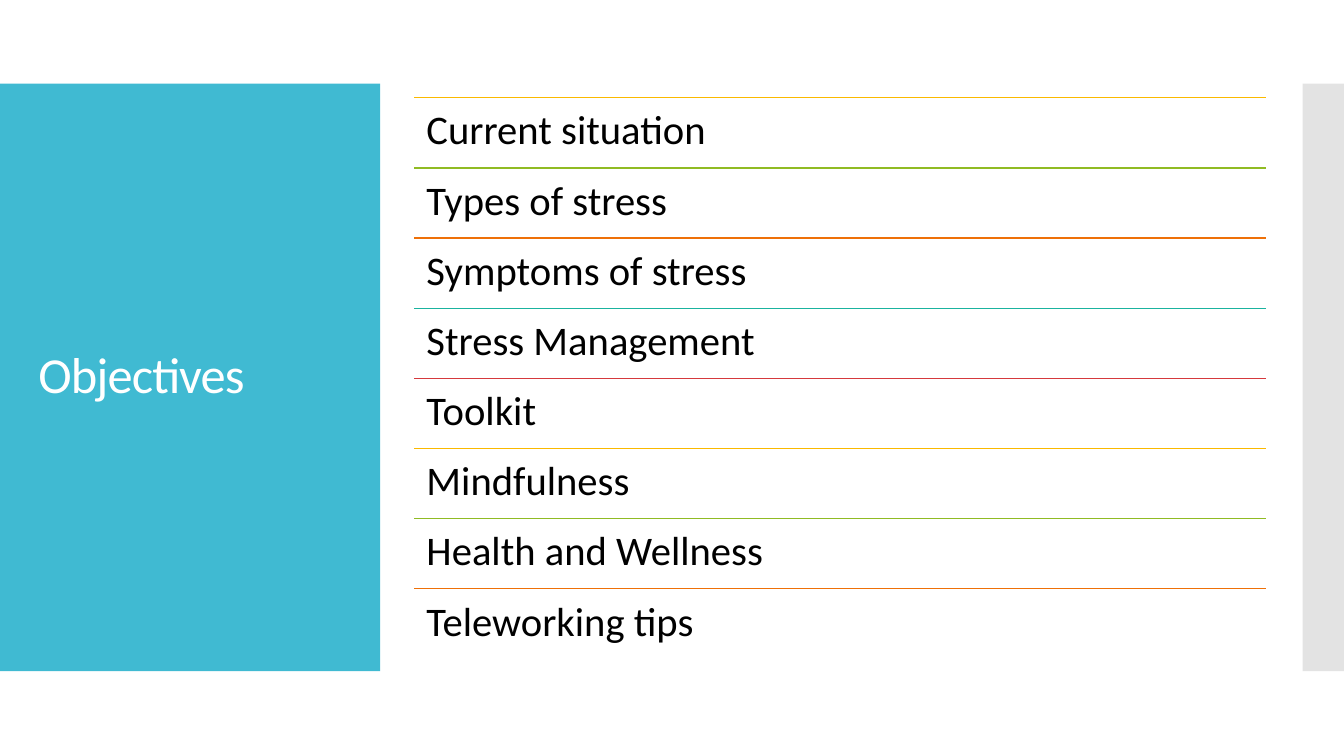
from itertools import cycle

from lxml.etree import SubElement
from pptx import Presentation
from pptx.dml.color import RGBColor
from pptx.enum.shapes import MSO_CONNECTOR, MSO_SHAPE
from pptx.enum.text import MSO_ANCHOR, MSO_AUTO_SIZE, PP_ALIGN
from pptx.oxml.ns import qn
from pptx.util import Inches, Pt

TOPICS = [
    "Current situation",
    "Types of stress",
    "Symptoms of stress",
    "Stress Management",
    "Toolkit",
    "Mindfulness",
    "Health and Wellness",
    "Teleworking tips",
]
RULES = ["FAB900", "90BB23", "EE7008", "1AB39F", "D5393D"]
LEFT, TOP, WIDTH, PITCH = 4.11, 0.97, 8.45, 0.696


def paint(color, value):
    color.rgb = RGBColor.from_string(value)


def write(frame, text, size, color, anchor):
    frame.word_wrap = True
    frame.auto_size = MSO_AUTO_SIZE.NONE
    frame.vertical_anchor = anchor
    para = frame.paragraphs[0]
    para.alignment = PP_ALIGN.LEFT
    para.line_spacing = 0.9
    run = para.add_run()
    run.text = text
    run.font.name = "Calibri"
    run.font.size = Pt(size)
    paint(run.font.color, color)
    return run


def add_band(slide, left, width, color, alpha=None):
    band = slide.shapes.add_shape(
        MSO_SHAPE.RECTANGLE, Inches(left), Inches(0.83), Inches(width), Inches(5.83))
    band.shadow.inherit = False
    band.fill.solid()
    paint(band.fill.fore_color, color)
    band.line.fill.background()
    if alpha:
        tint = band.element.spPr.find(qn("a:solidFill"))[0]
        SubElement(tint, qn("a:alpha")).set("val", str(alpha * 1000))
    slide.shapes.title.element.addprevious(band.element)


def set_title(slide, text):
    title = slide.shapes.title
    title.left, title.top = Inches(0.28), Inches(1.23)
    title.width, title.height = Inches(3.22), Inches(5.03)
    run = write(title.text_frame, text, 36, "FFFFFF", MSO_ANCHOR.MIDDLE)
    run.font._element.set("spc", "-60")


def add_rule(slide, top, color):
    rule = slide.shapes.add_connector(
        MSO_CONNECTOR.STRAIGHT, Inches(LEFT), Inches(top), Inches(LEFT + WIDTH), Inches(top))
    rule.line.width = Pt(0.85)
    paint(rule.line.color, color)
    SubElement(rule.element.spPr, qn("a:effectLst"))


def add_topic(slide, top, text):
    box = slide.shapes.add_textbox(Inches(LEFT), Inches(top), Inches(WIDTH), Inches(PITCH))
    frame = box.text_frame
    frame.margin_left = frame.margin_right = Inches(0.12)
    frame.margin_top = frame.margin_bottom = Inches(0.12)
    write(frame, text, 29, "000000", MSO_ANCHOR.TOP)


def main():
    deck = Presentation()
    deck.slide_width, deck.slide_height = Inches(13.33), Inches(7.5)
    slide = deck.slides.add_slide(deck.slide_layouts[5])
    add_band(slide, 0, 3.77, "40BAD2")
    add_band(slide, 12.92, 0.41, "C8C8C8", 50)
    set_title(slide, "Objectives")
    for row, (topic, color) in enumerate(zip(TOPICS, cycle(RULES))):
        top = TOP + row * PITCH
        add_rule(slide, top, color)
        add_topic(slide, top, topic)
    deck.save("out.pptx")


if __name__ == "__main__":
    main()
